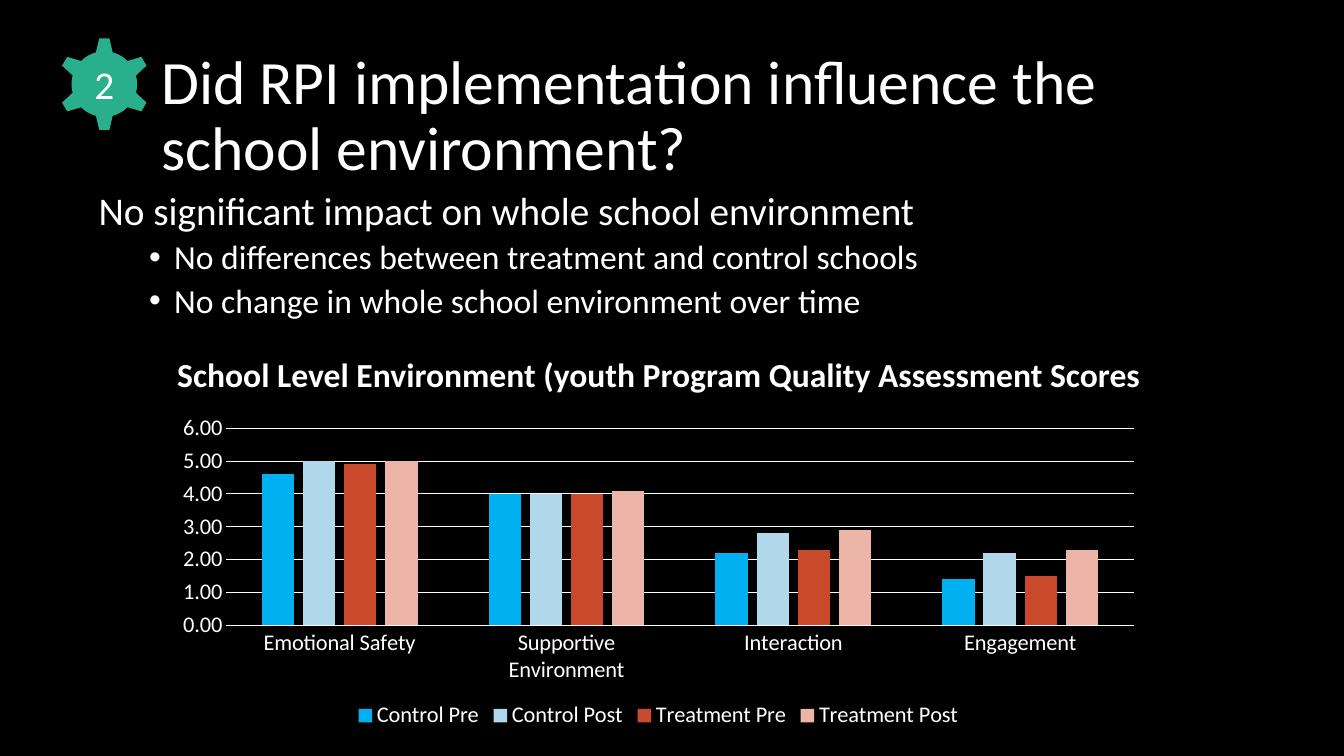
from lxml import etree
from pptx import Presentation
from pptx import util as u
from pptx.chart.data import CategoryChartData
from pptx.dml.color import RGBColor
from pptx.enum import chart as ch, shapes, text
from pptx.oxml.ns import qn

FONT = "Calibri"
WHITE = RGBColor(0xFF, 0xFF, 0xFF)
BLACK = RGBColor(0, 0, 0)
GREEN = RGBColor(0x29, 0xAF, 0x8C)

QUESTION_NUMBER = "2"
QUESTION = "Did RPI implementation influence the school environment?"
FINDING = "No significant impact on whole school environment"
DETAILS = [
    "No differences between treatment and control schools",
    "No change in whole school environment over time",
]
CHART_HEADING = "School Level Environment (youth Program Quality Assessment Scores"
QUALITIES = ["Emotional Safety", "Supportive Environment", "Interaction", "Engagement"]
SCORES = [
    ("Control Pre", (4.6, 4, 2.2, 1.4), RGBColor(0x00, 0xB0, 0xF0)),
    ("Control Post", (5, 4, 2.8, 2.2), RGBColor(0xB1, 0xD7, 0xEB)),
    ("Treatment Pre", (4.9, 4, 2.3, 1.5), RGBColor(0xC9, 0x49, 0x2C)),
    ("Treatment Post", (5, 4.1, 2.9, 2.3), RGBColor(0xEC, 0xB5, 0xA8)),
]


def box(*inches):
    return [u.Inches(value) for value in inches]


def style(font, size, bold=False):
    font.name, font.size, font.bold = FONT, u.Pt(size), bold
    font.color.rgb = WHITE


def write(frame, lines, size, bold=False):
    frame.word_wrap = True
    frame.text = "\n".join(lines)
    for paragraph in frame.paragraphs:
        for run in paragraph.runs:
            style(run.font, size, bold)


def add_bullet(paragraph):
    properties = paragraph._p.get_or_add_pPr()
    properties.set("marL", str(u.Inches(0.75)))
    properties.set("indent", str(u.Inches(-0.25)))
    etree.SubElement(properties, qn("a:buFont")).set("typeface", "Arial")
    etree.SubElement(properties, qn("a:buChar")).set("char", "•")


def draw_line(line):
    line.color.rgb = WHITE
    line.width = u.Pt(0.75)


deck = Presentation()
deck.slide_width, deck.slide_height = box(13.33, 7.5)
slide = deck.slides.add_slide(deck.slide_layouts[6])
slide.background.fill.solid()
slide.background.fill.fore_color.rgb = BLACK

question = slide.shapes.add_textbox(*box(1.5, 0.44, 11.07, 1.45)).text_frame
write(question, [QUESTION], 44)
question.vertical_anchor = text.MSO_ANCHOR.MIDDLE
question.paragraphs[0].line_spacing = 0.9

findings = slide.shapes.add_textbox(*box(0.88, 1.85, 11.86, 5.43)).text_frame
write(findings, [FINDING] + DETAILS, 24)
finding, *details = findings.paragraphs
finding.line_spacing = 0.9
finding.runs[0].font.size = u.Pt(28)
for detail in details:
    add_bullet(detail)
    detail.level = 1
    detail.line_spacing = 0.9
    detail.space_before = u.Pt(5)

score_data = CategoryChartData(number_format="0.00")
score_data.categories = QUALITIES
for name, values, _ in SCORES:
    score_data.add_series(name, values)
scores = slide.shapes.add_chart(
    ch.XL_CHART_TYPE.COLUMN_CLUSTERED, *box(1.62, 4.05, 9.82, 3.23), score_data
).chart
style(scores.font, 16)
scores.has_title = False
scores.has_legend = True
scores.legend.position = ch.XL_LEGEND_POSITION.BOTTOM
scores.legend.include_in_layout = False
style(scores.legend.font, 16)

columns = scores.plots[0]
columns.gap_width, columns.overlap = 219, -27
columns.vary_by_categories = False
for series, (_, _, color) in zip(columns.series, SCORES):
    series.format.fill.solid()
    series.format.fill.fore_color.rgb = color

for axis in (scores.category_axis, scores.value_axis):
    axis.major_tick_mark = axis.minor_tick_mark = ch.XL_TICK_MARK.NONE
    style(axis.tick_labels.font, 16)
draw_line(scores.category_axis.format.line)
score_axis = scores.value_axis
score_axis.minimum_scale, score_axis.maximum_scale, score_axis.major_unit = 0, 6, 1
score_axis.format.line.fill.background()
score_axis.has_major_gridlines = True
draw_line(score_axis.major_gridlines.format.line)
score_axis.tick_labels.number_format = "0.00"
score_axis.tick_labels.number_format_is_linked = False

gear = slide.shapes.add_shape(shapes.MSO_SHAPE.GEAR_6, *box(0.57, 0.37, 0.93, 0.93))
gear.shadow.inherit = False
gear.fill.solid()
gear.fill.fore_color.rgb = GREEN
gear.line.fill.background()
write(gear.text_frame, [QUESTION_NUMBER], 28)
gear.text_frame.vertical_anchor = text.MSO_ANCHOR.MIDDLE
gear.text_frame.paragraphs[0].alignment = text.PP_ALIGN.CENTER

heading = slide.shapes.add_textbox(*box(1.66, 3.46, 10.63, 0.5)).text_frame
write(heading, [CHART_HEADING], 24, bold=True)
heading.auto_size = text.MSO_AUTO_SIZE.SHAPE_TO_FIT_TEXT

deck.save("out.pptx")
